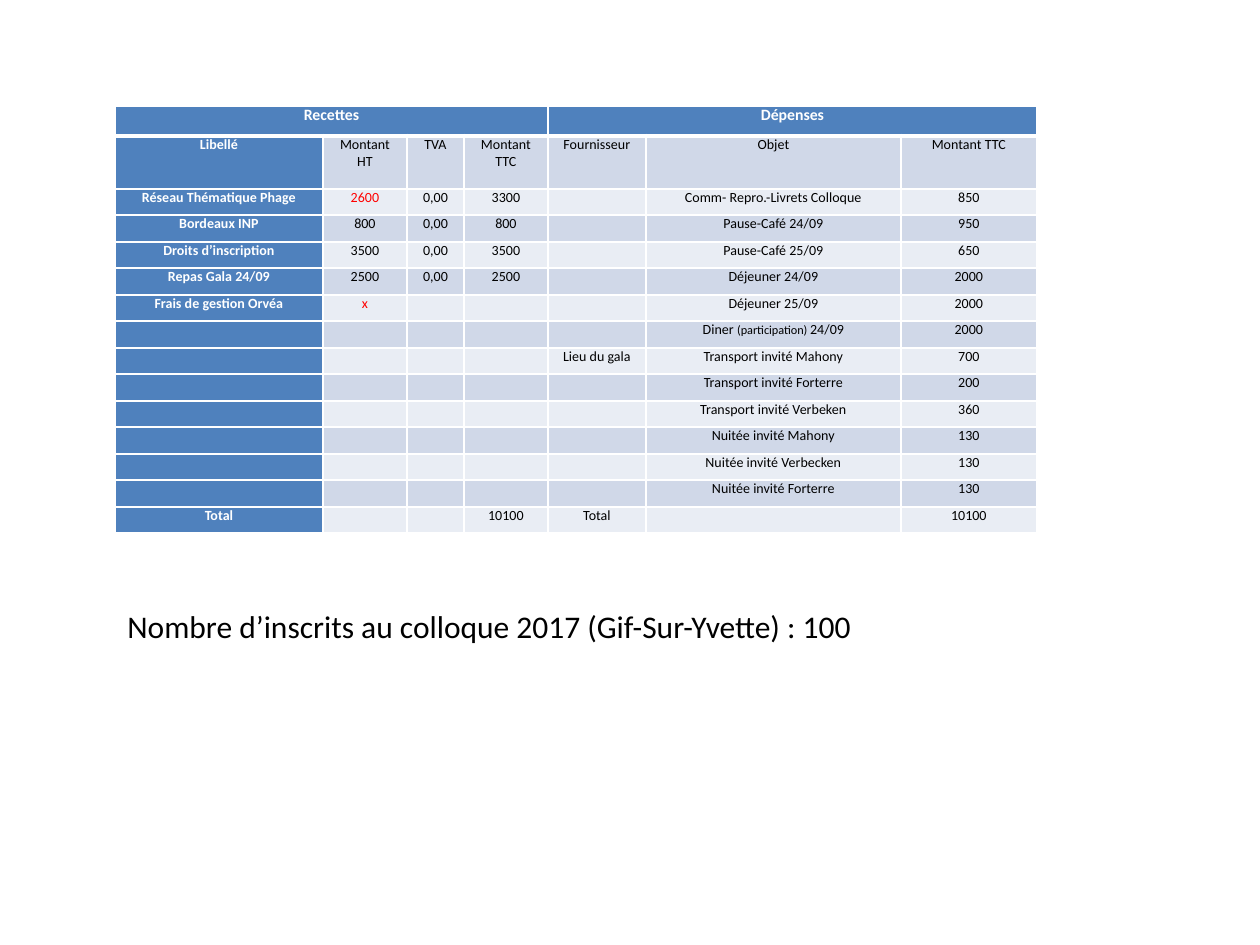
"""Budget slide for a colloquium: income and expense table with an attendance line."""
from dataclasses import dataclass
from typing import NamedTuple

from lxml.etree import SubElement
from pptx import Presentation
from pptx.dml.color import RGBColor
from pptx.enum.text import MSO_AUTO_SIZE, PP_ALIGN
from pptx.oxml.ns import qn
from pptx.util import Emu, Pt


@dataclass(frozen=True)
class Theme:
    font: str = "Calibri"
    accent: str = "4F81BD"
    bands: tuple[str, str] = ("D0D8E8", "E9EDF4")
    white: str = "FFFFFF"
    black: str = "000000"
    alert: str = "FF0000"
    heading: int = 9
    body: int = 8
    small: int = 7
    note: int = 18
    thin: int = 1
    thick: int = 3


class Piece(NamedTuple):
    text: str
    size: int
    color: str
    bold: bool = False


class Income(NamedTuple):
    label: str = ""
    net: str = ""
    vat: str = ""
    gross: str = ""


class Expense(NamedTuple):
    supplier: str = ""
    purpose: str = ""
    gross: str = ""


class Entry(NamedTuple):
    income: Income
    expense: Expense


THEME = Theme()
COLUMNS = (208, 84, 57, 84, 98, 255, 136)
INCOME_COLUMNS = len(Income._fields)
HEADING_HEIGHT, CAPTION_HEIGHT, ENTRY_HEIGHT = 30, 53, 26
LEFT, TABLE_TOP, NOTE_TOP = 115, 106, 601
ALERTS = ("2600", "x")
SMALL_PRINT = "(participation) "

ENTRIES = (
    Entry(Income("Libellé", "Montant HT", "TVA", "Montant TTC"),
          Expense("Fournisseur", "Objet", "Montant TTC")),
    Entry(Income("Réseau Thématique Phage", "2600", "0,00", "3300"),
          Expense("", "Comm- Repro.-Livrets Colloque", "850")),
    Entry(Income("Bordeaux INP", "800", "0,00", "800"), Expense("", "Pause-Café 24/09", "950")),
    Entry(Income("Droits d’inscription", "3500", "0,00", "3500"),
          Expense("", "Pause-Café 25/09", "650")),
    Entry(Income("Repas Gala 24/09", "2500", "0,00", "2500"),
          Expense("", "Déjeuner 24/09", "2000")),
    Entry(Income("Frais de gestion Orvéa", "x"), Expense("", "Déjeuner 25/09", "2000")),
    Entry(Income(), Expense("", "Diner (participation) 24/09", "2000")),
    Entry(Income(), Expense("Lieu du gala", "Transport invité Mahony", "700")),
    Entry(Income(), Expense("", "Transport invité Forterre", "200")),
    Entry(Income(), Expense("", "Transport invité Verbeken", "360")),
    Entry(Income(), Expense("", "Nuitée invité Mahony", "130")),
    Entry(Income(), Expense("", "Nuitée invité Verbecken", "130")),
    Entry(Income(), Expense("", "Nuitée invité Forterre", "130")),
    Entry(Income("Total", "", "", "10100"), Expense("Total", "", "10100")),
)


def px(length: int) -> Emu:
    """Convert pixels at 126 per inch to EMU."""
    return Emu(round(length * 914400 / 126))


def write(paragraph, pieces: list[Piece]) -> None:
    """Add formatted runs to a paragraph."""
    for piece in pieces:
        run = paragraph.add_run()
        run.text = piece.text
        formats = {"name": THEME.font, "size": Pt(piece.size), "bold": piece.bold}
        for attribute, value in formats.items():
            setattr(run.font, attribute, value)
        run.font.color.rgb = RGBColor.from_string(piece.color)


def draw_borders(cell, top: int, bottom: int) -> None:
    """Give a cell white borders, with top and bottom widths in points."""
    properties = cell._tc.get_or_add_tcPr()
    widths = {"a:lnL": THEME.thin, "a:lnR": THEME.thin, "a:lnT": top, "a:lnB": bottom}
    for side, width in widths.items():
        line = SubElement(properties, qn(side), w=str(Pt(width)))
        SubElement(SubElement(line, qn("a:solidFill")), qn("a:srgbClr"), val=THEME.white)


def draw_cell(cell, pieces: list[Piece], fill: str,
              top: int = THEME.thin, bottom: int = THEME.thin) -> None:
    """Style one table cell and write its text."""
    draw_borders(cell, top, bottom)
    cell.fill.solid()
    cell.fill.fore_color.rgb = RGBColor.from_string(fill)
    margins = {"margin_left": px(9), "margin_right": px(9), "margin_top": 0, "margin_bottom": 0}
    for attribute, value in margins.items():
        setattr(cell, attribute, value)
    paragraph = cell.text_frame.paragraphs[0]
    paragraph.alignment = PP_ALIGN.CENTER
    write(paragraph, pieces)
    if not pieces:
        SubElement(paragraph._p, qn("a:endParaRPr"), sz=str(THEME.body * 100))


def entry_pieces(text: str, is_label: bool) -> list[Piece]:
    """Split the text of an entry into formatted pieces."""
    if not text:
        return []
    if is_label:
        return [Piece(text, THEME.body, THEME.white, True)]
    color = THEME.alert if text in ALERTS else THEME.black
    before, small, after = text.partition(SMALL_PRINT)
    pieces = (Piece(before, THEME.body, color), Piece(small, THEME.small, color),
              Piece(after, THEME.body, color))
    return [piece for piece in pieces if piece.text]


def draw_budget(slide) -> None:
    """Draw the income and expense table."""
    heights = [HEADING_HEIGHT, CAPTION_HEIGHT]
    heights += [ENTRY_HEIGHT + index % 2 for index in range(len(ENTRIES) - 1)]
    budget = slide.shapes.add_table(len(heights), len(COLUMNS), px(LEFT), px(TABLE_TOP),
                                    px(sum(COLUMNS)), px(sum(heights))).table
    budget.horz_banding = False
    for column, width in zip(budget.columns, COLUMNS):
        column.width = px(width)
    for row, height in zip(budget.rows, heights):
        row.height = px(height)

    headings = {0: "Recettes", INCOME_COLUMNS: "Dépenses"}
    for column in range(len(COLUMNS)):
        pieces = ([Piece(headings[column], THEME.heading, THEME.white, True)]
                  if column in headings else [])
        draw_cell(budget.cell(0, column), pieces, THEME.accent, bottom=THEME.thick)
    budget.cell(0, 0).merge(budget.cell(0, INCOME_COLUMNS - 1))
    budget.cell(0, INCOME_COLUMNS).merge(budget.cell(0, len(COLUMNS) - 1))

    for index, entry in enumerate(ENTRIES):
        top = THEME.thin if index else THEME.thick
        for column, text in enumerate(entry.income + entry.expense):
            is_label = column == 0
            fill = THEME.accent if is_label else THEME.bands[index % 2]
            draw_cell(budget.cell(index + 1, column), entry_pieces(text, is_label), fill, top)


def draw_attendance(slide) -> None:
    """Write the attendance line below the table."""
    attendance = slide.shapes.add_textbox(px(LEFT), px(NOTE_TOP), px(762), px(50)).text_frame
    attendance.word_wrap = False
    attendance.auto_size = MSO_AUTO_SIZE.SHAPE_TO_FIT_TEXT
    write(attendance.paragraphs[0],
          [Piece("Nombre d’inscrits au colloque 2017 (Gif-Sur-Yvette) : 100",
                 THEME.note, THEME.black)])


def main() -> None:
    """Build and save the slide."""
    presentation = Presentation()
    presentation.slide_width, presentation.slide_height = px(1260), px(945)
    slide = presentation.slides.add_slide(presentation.slide_layouts[6])
    draw_budget(slide)
    draw_attendance(slide)
    presentation.save("out.pptx")


if __name__ == "__main__":
    main()
